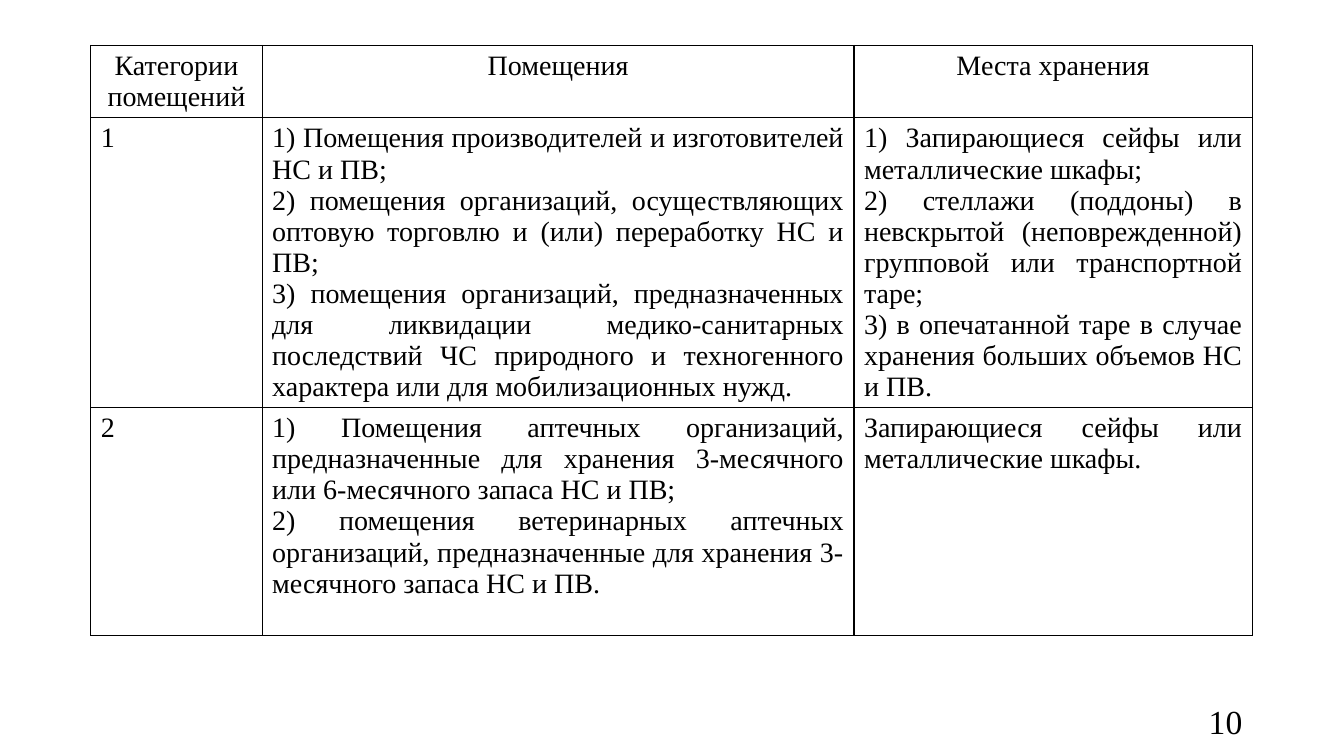
from lxml import etree
from pptx import Presentation
from pptx.dml.color import RGBColor
from pptx.enum.text import MSO_ANCHOR, PP_ALIGN
from pptx.oxml.ns import qn
from pptx.util import Inches, Pt

CENTER, JUSTIFY, RIGHT = PP_ALIGN.CENTER, PP_ALIGN.JUSTIFY, PP_ALIGN.RIGHT
MIDDLE = MSO_ANCHOR.MIDDLE
COLORS = {"text": "000000", "border": "000000"}
FONT = "Times New Roman"

COL_WIDTHS = [1.7, 5.87, 3.95]
ROW_HEIGHTS = [0.72, 2.87, 2.26]
# Each cell is a string, or a list of numbered items
ROWS = [
    ["Категории помещений", "Помещения", "Места хранения"],
    [
        "1",
        [
            "Помещения производителей и изготовителей НС и ПВ;",
            "помещения организаций, осуществляющих оптовую торговлю "
            "и (или) переработку НС и ПВ;",
            "помещения организаций, предназначенных для ликвидации "
            "медико-санитарных последствий ЧС природного и техногенного "
            "характера или для мобилизационных нужд.",
        ],
        [
            "Запирающиеся сейфы или металлические шкафы;",
            "стеллажи (поддоны) в невскрытой (неповрежденной) групповой "
            "или транспортной таре;",
            "в опечатанной таре в случае хранения больших объемов НС и ПВ.",
        ],
    ],
    [
        "2",
        [
            "Помещения аптечных организаций, предназначенные для хранения "
            "3-месячного или 6-месячного запаса НС и ПВ;",
            "помещения ветеринарных аптечных организаций, предназначенные "
            "для хранения 3-месячного запаса НС и ПВ.",
        ],
        "Запирающиеся сейфы или металлические шкафы.",
    ],
]


def add_text(p, text, size=20, align=JUSTIFY, numbered=False):
    p.alignment = align
    if numbered:
        pPr = p._p.get_or_add_pPr()
        pPr.set("marL", "0")
        pPr.set("indent", "0")
        etree.SubElement(pPr, qn("a:buFont"), typeface="+mj-lt")
        etree.SubElement(pPr, qn("a:buAutoNum"), type="arabicParenR")
        text = " " + text
    r = p.add_run()
    r.text = text
    r.font.name = FONT
    r.font.size = Pt(size)
    r.font.bold = False
    r.font.color.rgb = RGBColor.from_string(COLORS["text"])


def set_borders(cell, width=1):
    tcPr = cell._tc.get_or_add_tcPr()
    for i, side in enumerate(("lnL", "lnR", "lnT", "lnB")):
        ln = etree.Element(qn("a:" + side), w=str(Pt(width)))
        fill = etree.SubElement(ln, qn("a:solidFill"))
        etree.SubElement(fill, qn("a:srgbClr"), val=COLORS["border"])
        tcPr.insert(i, ln)


def fill_cell(cell, content, align):
    cell.fill.background()
    set_borders(cell)
    numbered = isinstance(content, list)
    tf = cell.text_frame
    for i, item in enumerate(content if numbered else [content]):
        p = tf.add_paragraph() if i else tf.paragraphs[0]
        add_text(p, item, align=align, numbered=numbered)


def add_storage_table(s, left, top):
    table = s.shapes.add_table(
        len(ROWS), len(COL_WIDTHS), Inches(left), Inches(top),
        Inches(sum(COL_WIDTHS)), Inches(sum(ROW_HEIGHTS))).table
    table.first_row = table.horz_banding = False
    for col, width in zip(table.columns, COL_WIDTHS):
        col.width = Inches(width)
    for row, height in zip(table.rows, ROW_HEIGHTS):
        row.height = Inches(height)
    for i, row in enumerate(ROWS):
        for j, content in enumerate(row):
            fill_cell(table.cell(i, j), content, JUSTIFY if i else CENTER)


def add_page_number(s, number):
    sp = s.shapes.add_textbox(Inches(9.42), Inches(6.95), Inches(3), Inches(0.4))
    tf = sp.text_frame
    tf.word_wrap = True
    tf.vertical_anchor = MIDDLE
    add_text(tf.paragraphs[0], number, size=24, align=RIGHT)


def main():
    prs = Presentation()
    prs.slide_width, prs.slide_height = Inches(13.33), Inches(7.5)
    s = prs.slides.add_slide(prs.slide_layouts[6])
    # Storage rules by room category
    add_storage_table(s, 0.9, 0.45)
    # Page number
    add_page_number(s, "10")
    prs.save("out.pptx")


if __name__ == "__main__":
    main()
